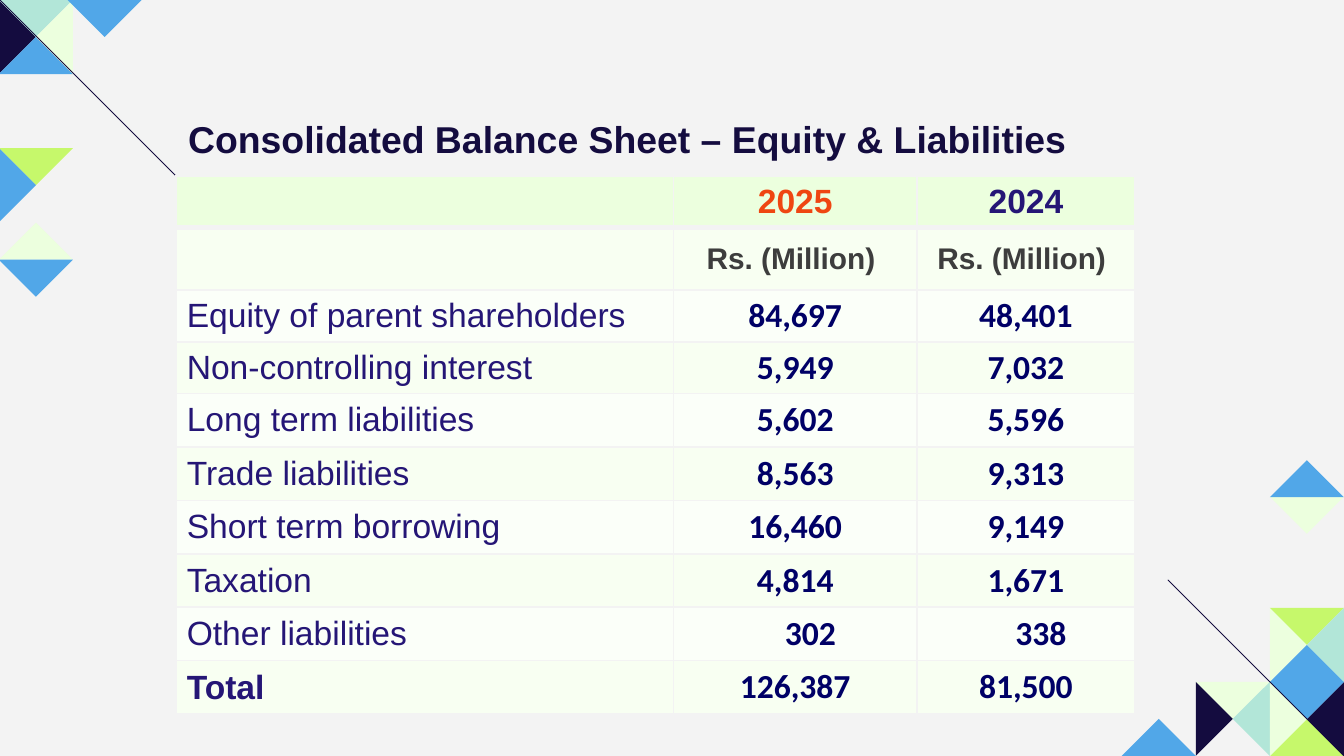
from pptx import Presentation
from pptx.dml.color import RGBColor
from pptx.enum.shapes import MSO_CONNECTOR
from pptx.enum.text import MSO_ANCHOR, MSO_AUTO_SIZE, PP_ALIGN
from pptx.oxml import parse_xml
from pptx.oxml.ns import nsdecls
from pptx.util import Cm, Pt

GREY = RGBColor(0xF3, 0xF3, 0xF3)
NAVY = RGBColor(0x14, 0x0C, 0x3F)
BLUE = RGBColor(0x51, 0xA7, 0xE8)
TEAL = RGBColor(0xB2, 0xE6, 0xD8)
LIME = RGBColor(0xC6, 0xF8, 0x6B)
MINT = RGBColor(0xEC, 0xFF, 0xDE)
PALE = RGBColor(0xF8, 0xFF, 0xF2)
WHITE = RGBColor(0xFB, 0xFF, 0xF9)
RED = RGBColor(0xEF, 0x46, 0x11)
INDIGO = RGBColor(0x25, 0x16, 0x76)
DARK = RGBColor(0x3D, 0x3D, 0x3D)
DEEP = RGBColor(0x00, 0x00, 0x66)

HALF = 0.7  # height of a triangle, half of its base
SIDES = {"left": (-1, 0), "right": (1, 0), "up": (0, -1), "down": (0, 1)}

# Tip of the triangles in cm, then the colour on each side of it
TILES = [
    (23.3, 13.59, {"up": MINT, "right": TEAL, "left": NAVY}),
    (24.7, 12.19, {"left": MINT, "up": LIME, "down": BLUE, "right": TEAL}),
    (24.7, 13.59, {"right": NAVY, "down": LIME, "up": BLUE, "left": MINT}),
    (21.9, 13.59, {"down": BLUE}),
    (24.7, 10.09, {"up": MINT}),
    (24.7, 8.7, {"down": BLUE}),
    (0.68, 0.7, {"left": NAVY, "up": TEAL, "down": BLUE, "right": MINT}),
    (1.98, 0.7, {"up": BLUE}),
    (0.68, 3.5, {"up": LIME, "left": BLUE}),
    (0.68, 4.21, {"down": MINT}),
    (0.68, 5.61, {"up": BLUE}),
]

COLS = [9.4, 4.6, 4.12]
ROWS = [0.95, 1.18] + [0.96] * 2 + [1.01] * 6
DATA = [
    ("", "2025", "2024"),
    ("", "Rs. (Million) ", "Rs. (Million) "),
    ("Equity of parent shareholders", "84,697", "48,401"),
    ("Non-controlling interest", "5,949", "7,032"),
    ("Long term liabilities", "5,602", "5,596"),
    ("Trade liabilities", "8,563", "9,313"),
    ("Short term borrowing", "16,460", "9,149"),
    ("Taxation", "4,814", "1,671"),
    ("Other liabilities", "302", "338"),
    ("Total", "126,387", "81,500"),
]


def style(para, size, color, bold=True, face="Arial"):
    for run in para.runs:
        font = run.font
        font.name, font.size, font.bold = face, Pt(size), bold
        font.color.rgb = color


def add_tile(slide, x, y, side, color):
    dx, dy = SIDES[side]
    base = [(x + HALF * (dx + s * dy), y + HALF * (dy + s * dx)) for s in (-1, 1)]
    form = slide.shapes.build_freeform(Cm(x), Cm(y))
    form.add_line_segments([(Cm(a), Cm(b)) for a, b in base], close=True)
    tile = form.convert_to_shape()
    tile.shadow.inherit = False
    tile.fill.solid()
    tile.fill.fore_color.rgb = color
    tile.line.fill.background()


def add_line(slide, *ends):
    line = slide.shapes.add_connector(MSO_CONNECTOR.STRAIGHT, *map(Cm, ends))
    line.line.color.rgb = NAVY
    line.line.width = Pt(0.42)
    line._element.spPr.append(parse_xml(f"<a:effectLst {nsdecls('a')}/>"))


def set_title(slide, text):
    title = slide.shapes.title
    title.left, title.top, title.width, title.height = map(Cm, (3.3, 2.06, 17.25, 1.11))
    frame = title.text_frame
    frame.text = text
    frame.word_wrap = False
    frame.auto_size = MSO_AUTO_SIZE.NONE
    frame.vertical_anchor = MSO_ANCHOR.TOP
    para = frame.paragraphs[0]
    para.alignment = PP_ALIGN.LEFT
    style(para, 20, NAVY)


def set_edges(cell, base):
    props = cell._tc.get_or_add_tcPr()
    for i, (edge, width) in enumerate(zip("LRTB", (1, 1, 1, base))):
        props.insert(i, parse_xml(
            f'<a:ln{edge} {nsdecls("a")} w="{Pt(width)}"><a:solidFill>'
            f'<a:srgbClr val="{GREY}"/></a:solidFill></a:ln{edge}>'))


def fill_cell(cell, text, row, col):
    cell.fill.solid()
    cell.fill.fore_color.rgb = MINT if row == 0 else PALE if row % 2 else WHITE
    set_edges(cell, 3 if row == 0 else 1)
    cell.vertical_anchor = MSO_ANCHOR.MIDDLE
    cell.margin_left = cell.margin_right = Cm(0.2)
    cell.margin_top = cell.margin_bottom = Cm(0.1)
    cell.text_frame.text = text
    para = cell.text_frame.paragraphs[0]
    if col:
        para.alignment = PP_ALIGN.CENTER
    if row == 0:
        style(para, 18, RED if col == 1 else INDIGO)
    elif row == 1:
        style(para, 16, DARK)
    elif col == 0:
        style(para, 18, INDIGO, bold=text == "Total")
    else:
        style(para, 18, DEEP, face="Calibri")
        if len(text) == 3:  # short figures sit further right
            cell.margin_left = Cm(0.77)


def add_sheet(slide):
    frame = slide.shapes.add_table(len(ROWS), len(COLS), Cm(3.33), Cm(3.33),
                                   Cm(sum(COLS)), Cm(sum(ROWS)))
    table = frame.table
    for col, width in zip(table.columns, COLS):
        col.width = Cm(width)
    for row, height in zip(table.rows, ROWS):
        row.height = Cm(height)
    for r, texts in enumerate(DATA):
        for c, text in enumerate(texts):
            fill_cell(table.cell(r, c), text, r, c)


def main():
    deck = Presentation()
    deck.slide_width, deck.slide_height = Cm(25.4), Cm(14.29)
    slide = deck.slides.add_slide(deck.slide_layouts[5])
    slide.background.fill.solid()
    slide.background.fill.fore_color.rgb = GREY

    # Corner pattern
    for x, y, sides in TILES:
        for side, color in sides.items():
            add_tile(slide, x, y, side, color)
    add_line(slide, 0, 0, 3.33, 3.33)
    add_line(slide, 22.07, 10.96, 25.4, 14.29)

    # Heading and figures
    set_title(slide, "Consolidated Balance Sheet – Equity & Liabilities")
    add_sheet(slide)
    deck.save("out.pptx")


if __name__ == "__main__":
    main()
